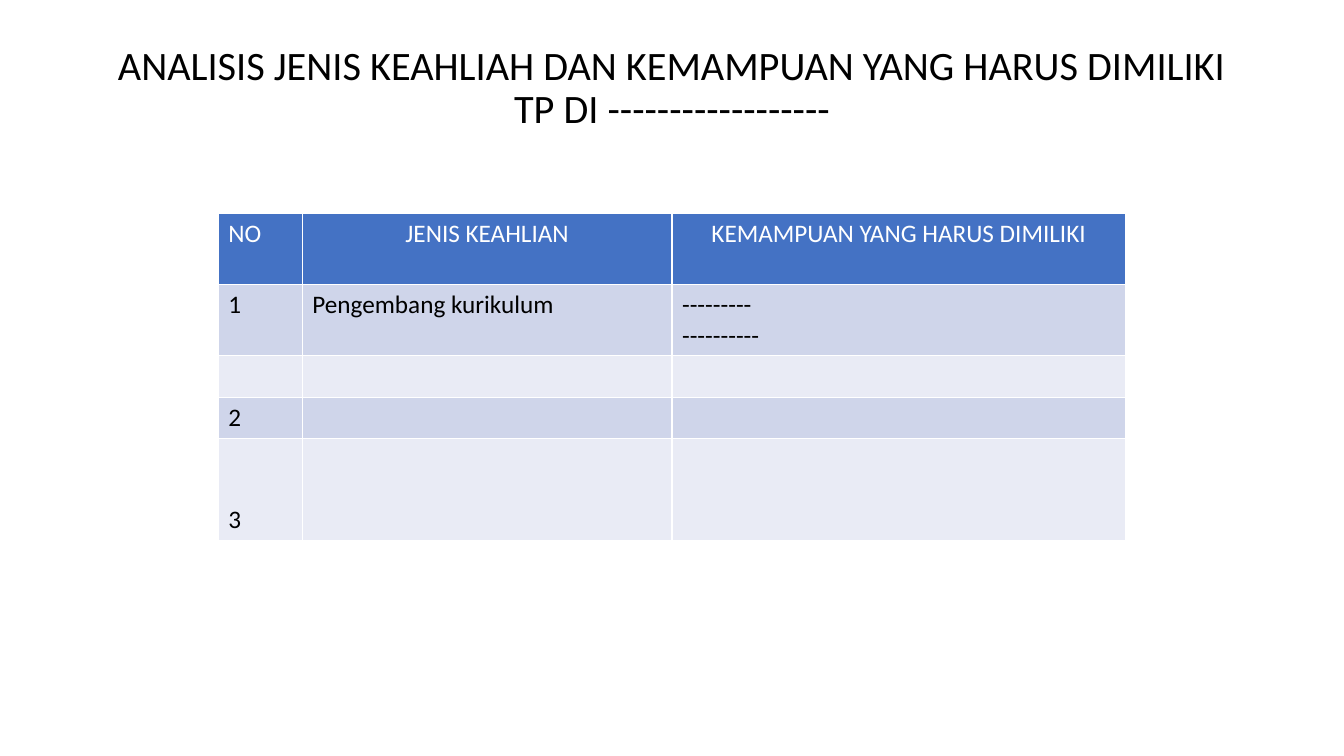
from dataclasses import dataclass

from lxml.etree import SubElement
from pptx import Presentation
from pptx.dml.color import RGBColor
from pptx.enum.text import MSO_ANCHOR as Anchor, PP_ALIGN as Align
from pptx.oxml.ns import qn
from pptx.util import Inches, Pt


@dataclass(frozen=True)
class Theme:
    font: str = "Calibri"
    title_size: float = 28.8
    table_size: float = 18
    ink: str = "000000"
    white: str = "FFFFFF"
    header: str = "4472C4"
    bands: tuple = ("CFD5EA", "E9EBF5")
    border_width: float = 1


THEME = Theme()
WIDTH, HEIGHT = Inches(13.333), Inches(7.5)
COLUMN, ROW = WIDTH / 16, HEIGHT / 75

TITLE = "ANALISIS JENIS KEAHLIAH DAN KEMAMPUAN YANG HARUS DIMILIKI TP DI ------------------"
SKILLS = [
    ["NO", "JENIS KEAHLIAN", "KEMAMPUAN YANG HARUS DIMILIKI"],
    ["1", "Pengembang kurikulum", "---------\n----------"],
    ["", "", ""],
    ["2", "", ""],
    ["3", "", ""],
]
COLUMN_SPANS = [1, 4.4, 5.4]
ROW_SPANS = [7, 7.1, 4.1, 4.1, 10.1]


def columns(count):
    return round(count * COLUMN)


def rows(count):
    return round(count * ROW)


def write(frame, text, size, color, align=Align.LEFT, spacing=None):
    frame.text = text
    for para in frame.paragraphs:
        para.alignment = align
        para.line_spacing = spacing
        para.font.size = Pt(size)
        for span in para.runs:
            span.font.name = THEME.font
            span.font.size = Pt(size)
            span.font.bold = False
            span.font.color.rgb = RGBColor.from_string(color)


def add_title(page, text):
    title = page.shapes.title
    title.left, title.top = columns(1.1), rows(4)
    title.width, title.height = columns(13.8), rows(14.5)
    frame = title.text_frame
    frame.word_wrap = True
    frame.vertical_anchor = Anchor.TOP
    write(frame, text, THEME.title_size, THEME.ink, Align.CENTER, 0.9)


def outline_cell(cell):
    """Draw the four borders; call before filling, as lines come first in the XML."""
    props = cell._tc.get_or_add_tcPr()
    for side in ("a:lnL", "a:lnR", "a:lnT", "a:lnB"):
        line = SubElement(props, qn(side), w=str(Pt(THEME.border_width)))
        fill = SubElement(line, qn("a:solidFill"))
        SubElement(fill, qn("a:srgbClr"), val=THEME.white)


def format_cell(cell, text, fill, color, align):
    outline_cell(cell)
    cell.fill.solid()
    cell.fill.fore_color.rgb = RGBColor.from_string(fill)
    write(cell.text_frame, text, THEME.table_size, color, align)


def add_skill_table(page, content):
    table = page.shapes.add_table(
        len(content), len(content[0]), columns(2.6), rows(21.2),
        columns(sum(COLUMN_SPANS)), rows(sum(ROW_SPANS)),
    ).table
    table.horz_banding = False
    for column, span in zip(table.columns, COLUMN_SPANS):
        column.width = columns(span)
    for row, span in zip(table.rows, ROW_SPANS):
        row.height = rows(span)

    for r, texts in enumerate(content):
        is_header = r == 0
        fill = THEME.header if is_header else THEME.bands[(r - 1) % 2]
        color = THEME.white if is_header else THEME.ink
        for c, text in enumerate(texts):
            align = Align.CENTER if is_header and c > 0 else Align.LEFT
            format_cell(table.cell(r, c), text, fill, color, align)
    table.cell(len(content) - 1, 0).vertical_anchor = Anchor.BOTTOM


def main():
    deck = Presentation()
    deck.slide_width, deck.slide_height = WIDTH, HEIGHT
    page = deck.slides.add_slide(deck.slide_layouts.get_by_name("Title Only"))
    add_title(page, TITLE)
    add_skill_table(page, SKILLS)
    deck.save("out.pptx")


if __name__ == "__main__":
    main()
